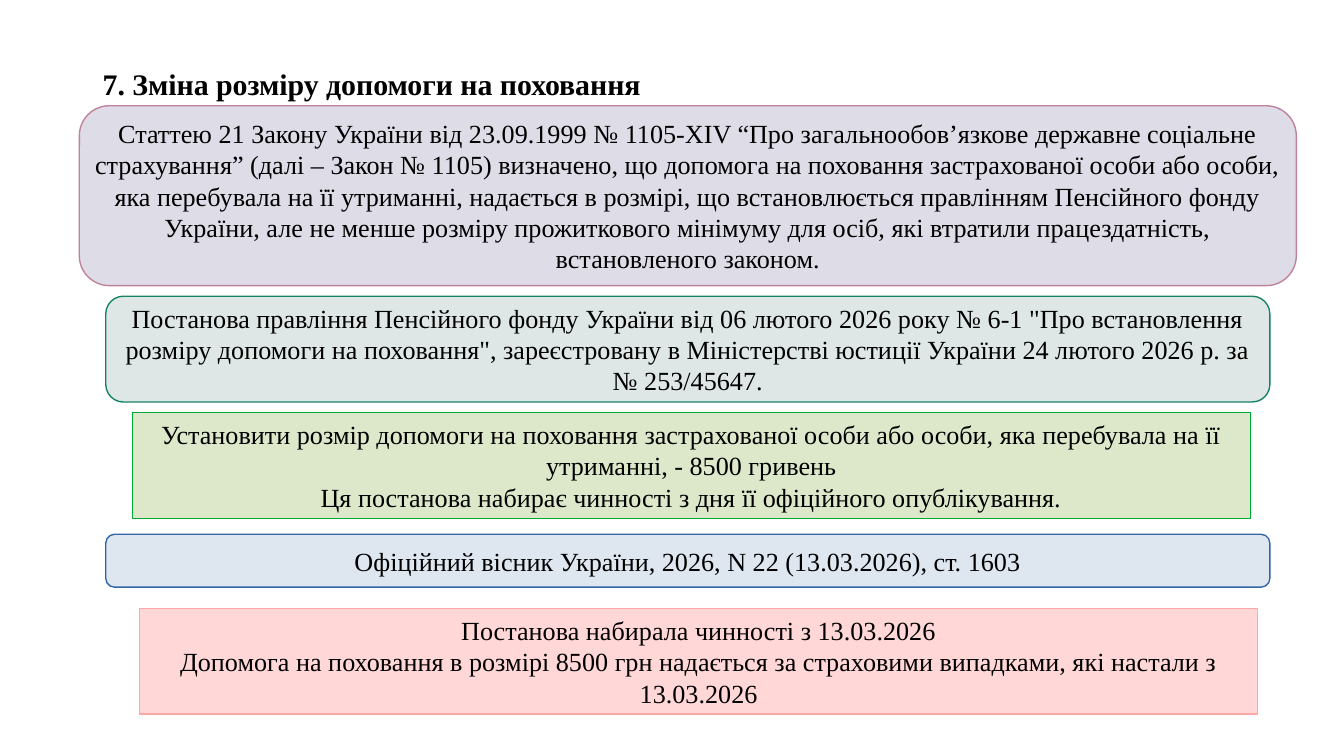
"""Build the slide on the change of the funeral aid amount."""
import dataclasses

import pptx
import pptx.dml.color
import pptx.enum.shapes
import pptx.enum.text
import pptx.util

Cm = pptx.util.Cm
Pt = pptx.util.Pt
Kind = pptx.enum.shapes.MSO_SHAPE
Align = pptx.enum.text.PP_ALIGN


@dataclasses.dataclass(frozen=True)
class Theme:
    font: str = "Times New Roman"
    head: int = 16
    body: int = 14
    line: float = 0.75
    ink: str = "000000"
    law: tuple = ("DEDCE6", "BF819E")
    act: tuple = ("DEE7E5", "158466")
    grant: tuple = ("DDE8CB", "00A933")
    press: tuple = ("DEE6EF", "3465A4")
    start: tuple = ("FFD7D7", "FFA6A6")


class Page:
    def __init__(self, slide, theme):
        self.slide = slide
        self.theme = theme

    def color(self, code):
        return pptx.dml.color.RGBColor.from_string(code)

    def label(self, frame, text, size, align, bold, side, edge):
        frame.text = text
        frame.word_wrap = True
        frame.auto_size = pptx.enum.text.MSO_AUTO_SIZE.NONE
        frame.vertical_anchor = pptx.enum.text.MSO_ANCHOR.MIDDLE
        frame.margin_left = frame.margin_right = Cm(side)
        frame.margin_top = frame.margin_bottom = Cm(edge)
        for para in frame.paragraphs:
            para.alignment = align
            para.font.name = self.theme.font
            para.font.size = Pt(size)
            para.font.bold = bold
            para.font.color.rgb = self.color(self.theme.ink)

    def title(self, text, left, top, width, height):
        shape = self.slide.shapes.title
        shape.left, shape.top = Cm(left), Cm(top)
        shape.width, shape.height = Cm(width), Cm(height)
        frame = shape.text_frame
        self.label(frame, text, self.theme.head, Align.LEFT, True, 0.19, 0.1)
        frame.paragraphs[0].line_spacing = 0.9

    def box(self, kind, tint, left, top, width, height, text):
        shape = self.slide.shapes.add_shape(
            kind, Cm(left), Cm(top), Cm(width), Cm(height))
        shape.shadow.inherit = False
        fill, line = tint
        shape.fill.solid()
        shape.fill.fore_color.rgb = self.color(fill)
        shape.line.color.rgb = self.color(line)
        shape.line.width = Pt(self.theme.line)
        inset = 0.29 * height / 6 if kind == Kind.ROUNDED_RECTANGLE else 0
        self.label(shape.text_frame, text, self.theme.body, Align.CENTER,
                   False, 0.25 - inset, max(0, 0.13 - inset))


def main():
    deck = pptx.Presentation()
    deck.slide_width, deck.slide_height = Cm(25.4), Cm(14.29)
    theme = Theme()
    page = Page(deck.slides.add_slide(deck.slide_layouts[5]), theme)
    page.title("7. Зміна розміру допомоги на поховання", 1.75, 0.28, 21.9, 2.69)

    oval, rect = Kind.ROUNDED_RECTANGLE, Kind.RECTANGLE
    page.box(oval, theme.law, 1.5, 2, 23, 3.4,
             "Статтею 21 Закону України від 23.09.1999 № 1105-XIV “Про "
             "загальнообов’язкове державне соціальне страхування” "
             "(далі – Закон № 1105) визначено, що допомога на поховання "
             "застрахованої особи або особи, яка перебувала на її утриманні, "
             "надається в розмірі, що встановлюється правлінням Пенсійного "
             "фонду України, але не менше розміру прожиткового мінімуму для "
             "осіб, які втратили працездатність, встановленого законом.")
    page.box(oval, theme.act, 2, 5.6, 22, 2,
             "Постанова правління Пенсійного фонду України від 06 лютого 2026 "
             "року № 6-1 \"Про встановлення розміру допомоги на поховання\", "
             "зареєстровану в Міністерстві юстиції України 24 лютого 2026 р. "
             "за № 253/45647.")
    page.box(rect, theme.grant, 2.5, 7.8, 21.13, 2,
             "Установити розмір допомоги на поховання застрахованої особи або "
             "особи, яка перебувала на її утриманні, - 8500 гривень\n"
             "Ця постанова набирає чинності з дня її офіційного опублікування.")
    page.box(oval, theme.press, 2, 10.1, 22, 1,
             "Офіційний вісник України, 2026, N 22 (13.03.2026), ст. 1603")
    page.box(rect, theme.start, 2.64, 11.5, 21.13, 2,
             "Постанова набирала чинності з 13.03.2026\n"
             "Допомога на поховання в розмірі 8500 грн надається за страховими "
             "випадками, які настали з 13.03.2026")
    deck.save("out.pptx")


if __name__ == "__main__":
    main()
